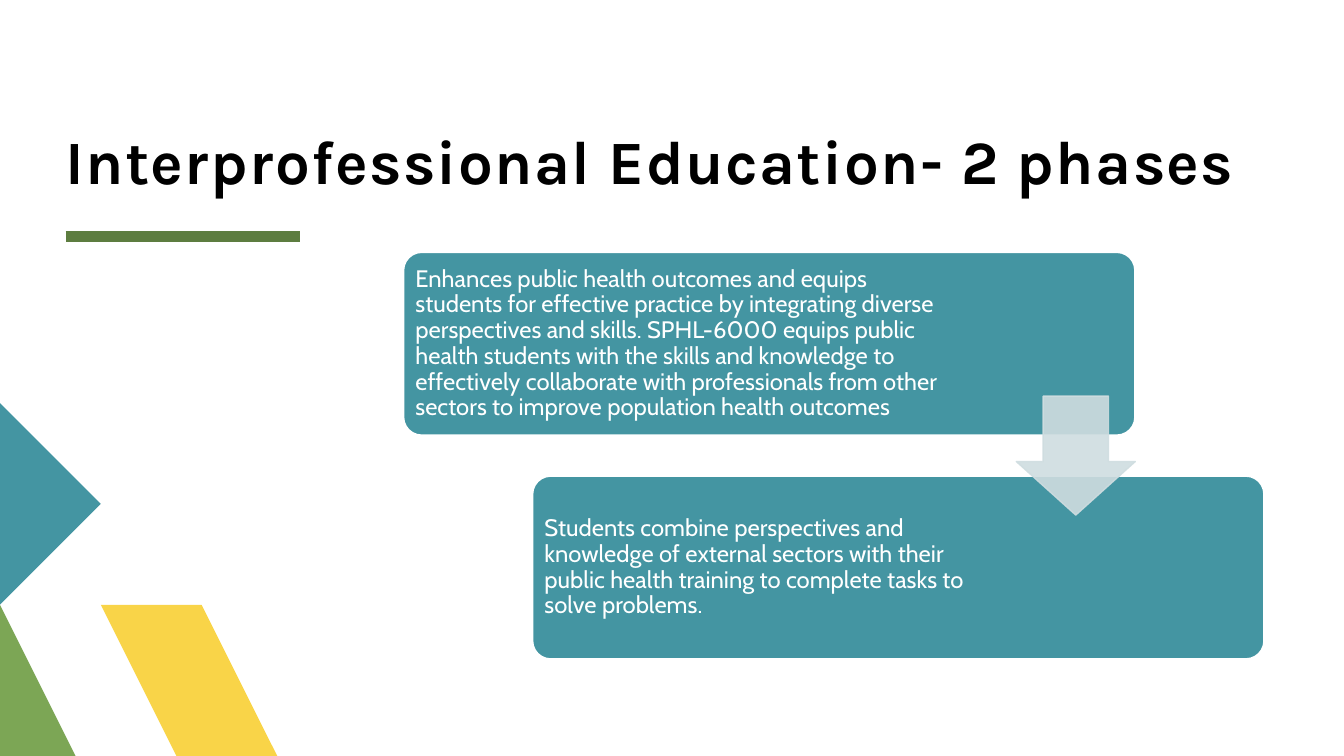
"""Build the slide on the two phases of interprofessional education."""
from dataclasses import dataclass

from lxml.etree import SubElement
from pptx import Presentation
from pptx.dml.color import RGBColor
from pptx.enum.shapes import MSO_CONNECTOR as Connector, MSO_SHAPE as Preset
from pptx.enum.text import MSO_ANCHOR as Anchor
from pptx.oxml.ns import qn
from pptx.shapes.autoshape import Shape
from pptx.slide import Slide
from pptx.util import Inches, Pt

WHITE = RGBColor(0xFF, 0xFF, 0xFF)
BLACK = RGBColor(0x00, 0x00, 0x00)
TEAL = RGBColor(0x44, 0x95, 0xA2)
GREEN = RGBColor(0x7C, 0xA6, 0x55)
DARK_GREEN = RGBColor(0x5D, 0x7D, 0x40)
YELLOW = RGBColor(0xF9, 0xD4, 0x48)
PALE = RGBColor(0xCF, 0xDD, 0xE0)

CARD_WIDTH, CARD_HEIGHT = 7.26, 1.82
TEXT_INSET = 0.05


@dataclass(frozen=True)
class Ornament:
    color: RGBColor
    points: tuple[tuple[float, float], ...]


@dataclass(frozen=True)
class Phase:
    left: float
    top: float
    text_width: float
    text: str


@dataclass(frozen=True)
class Style:
    font: str
    size: float
    color: RGBColor
    line_spacing: float
    anchor: Anchor
    margin: float = 0
    space_after: float = 0
    bold: bool = False
    tracking: int = 0


TITLE = Style("Karla", 44, BLACK, 0.8, Anchor.BOTTOM, bold=True, tracking=100)
BODY = Style("Cabin", 17, WHITE, 0.9, Anchor.MIDDLE, margin=0.07, space_after=6)

ORNAMENTS = (
    Ornament(YELLOW, ((3.24, 7.5), (2.15, 7.5), (1.06, 6.41), (1.61, 5.87))),
    Ornament(GREEN, ((1.06, 7.5), (0, 7.5), (0, 6.44))),
    Ornament(TEAL, ((0, 4.27), (1.06, 5.33), (0, 6.39))),
)

PHASES = (
    Phase(4, 2.5, 5.38,
          "Enhances public health outcomes and equips students for effective "
          "practice by integrating diverse perspectives and skills. SPHL-6000 "
          "equips public health students with the skills and knowledge to "
          "effectively collaborate with professionals from other sectors to "
          "improve population health outcomes"),
    Phase(5.28, 4.72, 4.69,
          "Students combine perspectives and knowledge of external sectors with "
          "their public health training to complete tasks to solve problems."),
)


def paint(shape: Shape, fill: RGBColor, line: RGBColor | None = None,
          line_width: float = 0) -> None:
    shape.shadow.inherit = False
    shape.fill.solid()
    shape.fill.fore_color.rgb = fill
    if line is None:
        shape.line.fill.background()
    else:
        shape.line.color.rgb = line
        shape.line.width = Pt(line_width)


def add_text(page: Slide, left: float, top: float, width: float, height: float,
             text: str, style: Style) -> None:
    box = page.shapes.add_textbox(Inches(left), Inches(top), Inches(width), Inches(height))
    frame = box.text_frame
    frame.word_wrap = True
    frame.vertical_anchor = style.anchor
    frame.margin_left = frame.margin_right = Inches(style.margin)
    frame.margin_top = frame.margin_bottom = Inches(style.margin)
    para = frame.paragraphs[0]
    para.line_spacing = style.line_spacing
    para.space_after = Pt(style.space_after)
    span = para.add_run()
    span.text = text
    span.font.name = style.font
    span.font.size = Pt(style.size)
    span.font.bold = style.bold
    span.font.color.rgb = style.color
    if style.tracking:
        span.font._element.set("spc", str(style.tracking))


def add_ornament(page: Slide, ornament: Ornament) -> None:
    start, *rest = ornament.points
    builder = page.shapes.build_freeform(*start, scale=Inches(1))
    builder.add_line_segments(rest, close=True)
    paint(builder.convert_to_shape(), ornament.color)


def add_title_rule(page: Slide) -> None:
    rule = page.shapes.add_connector(
        Connector.STRAIGHT, Inches(0.65), Inches(2.35), Inches(2.98), Inches(2.35))
    rule.line.color.rgb = DARK_GREEN
    rule.line.width = Pt(8)
    SubElement(rule._element.spPr, qn("a:effectLst"))


def add_phase(page: Slide, phase: Phase) -> None:
    card = page.shapes.add_shape(
        Preset.ROUNDED_RECTANGLE, Inches(phase.left), Inches(phase.top),
        Inches(CARD_WIDTH), Inches(CARD_HEIGHT))
    card.adjustments[0] = 0.1
    paint(card, TEAL, WHITE, 1.5)
    add_text(page, phase.left + TEXT_INSET, phase.top + TEXT_INSET, phase.text_width,
             CARD_HEIGHT - 2 * TEXT_INSET, phase.text, BODY)


def add_phase_arrow(page: Slide) -> None:
    arrow = page.shapes.add_shape(
        Preset.DOWN_ARROW, Inches(10.08), Inches(3.93), Inches(1.18), Inches(1.18))
    arrow.adjustments[0] = 0.55
    arrow.adjustments[1] = 0.45
    paint(arrow, PALE, PALE, 1)
    for color in arrow._element.spPr.iter(qn("a:srgbClr")):
        SubElement(color, qn("a:alpha")).set("val", "90000")


def main() -> None:
    deck = Presentation()
    deck.slide_width, deck.slide_height = Inches(13.33), Inches(7.5)
    page = deck.slides.add_slide(deck.slide_layouts[6])
    add_title_rule(page)
    for ornament in ORNAMENTS:
        add_ornament(page, ornament)
    add_text(page, 0.65, 0.11, 11.89, 1.84, "Interprofessional Education- 2 phases", TITLE)
    for phase in PHASES:
        add_phase(page, phase)
    add_phase_arrow(page)
    deck.save("out.pptx")


if __name__ == "__main__":
    main()
